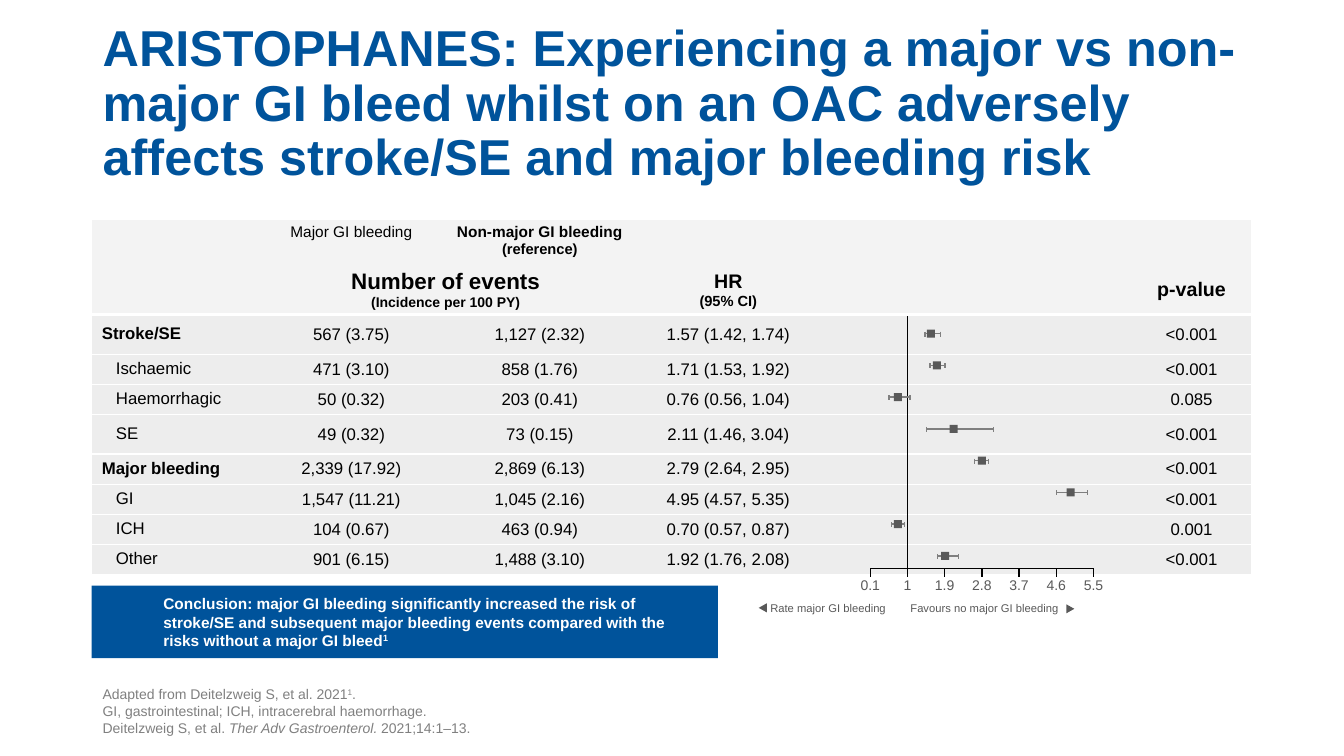
from lxml.etree import SubElement
from pptx import Presentation
from pptx.dml.color import RGBColor
from pptx.enum.shapes import MSO_CONNECTOR, MSO_SHAPE
from pptx.enum.text import MSO_ANCHOR, PP_ALIGN
from pptx.oxml.ns import qn
from pptx.util import Inches, Pt

BLUE, GREY, BLACK, WHITE = "00539B", "595959", "000000", "FFFFFF"
HEADER_FILL, BODY_FILL = "F3F3F3", "EDEDED"
NO_GRID_STYLE = "{2D5ABB26-0587-4C30-8999-92F81FD0307C}"
COLUMN_WIDTHS = [1.64, 1.87, 1.87, 1.87, 3.07, 1.18]
ROW_HEIGHTS = [0.45, 0.45, 0.39, 0.3, 0.3, 0.39, 0.3, 0.3, 0.3, 0.3]
GROUPS = ("Stroke/SE", "Major bleeding")

# Outcome, major events, non-major events, HR (95% CI), p-value
OUTCOMES = [
    ("Stroke/SE", "567 (3.75)", "1,127 (2.32)", "1.57 (1.42, 1.74)", "<0.001"),
    ("Ischaemic", "471 (3.10)", "858 (1.76)", "1.71 (1.53, 1.92)", "<0.001"),
    ("Haemorrhagic", "50 (0.32)", "203 (0.41)", "0.76 (0.56, 1.04)", "0.085"),
    ("SE", "49 (0.32)", "73 (0.15)", "2.11 (1.46, 3.04)", "<0.001"),
    ("Major bleeding", "2,339 (17.92)", "2,869 (6.13)", "2.79 (2.64, 2.95)", "<0.001"),
    ("GI", "1,547 (11.21)", "1,045 (2.16)", "4.95 (4.57, 5.35)", "<0.001"),
    ("ICH", "104 (0.67)", "463 (0.94)", "0.70 (0.57, 0.87)", "0.001"),
    ("Other", "901 (6.15)", "1,488 (3.10)", "1.92 (1.76, 2.08)", "<0.001"),
]
# Plotted estimate, lower and upper end for each outcome
INTERVALS = [(1.57, 1.43, 1.8), (1.71, 1.55, 1.91), (0.77, 0.55, 1.06), (2.12, 1.46, 3.08),
             (2.8, 2.62, 2.96), (4.95, 4.6, 5.35), (0.77, 0.61, 0.93), (1.91, 1.73, 2.24)]
TICKS = [0.1, 1, 1.9, 2.8, 3.7, 4.6, 5.5]
AXIS_Y = 5.64


def color(hex_value):
    return RGBColor.from_string(hex_value)


def hr_x(ratio):
    return 9 + (ratio - 1) * 0.41


def write(frame, paragraphs, size, ink, align=PP_ALIGN.LEFT, anchor=MSO_ANCHOR.TOP, spacing=None):
    """Each paragraph is a list of (text, run options)."""
    frame.word_wrap = True
    frame.vertical_anchor = anchor
    for i, parts in enumerate(paragraphs):
        paragraph = frame.paragraphs[0] if i == 0 else frame.add_paragraph()
        paragraph.alignment = align
        if spacing:
            paragraph.line_spacing = spacing
        for text, options in parts:
            if options.get("new_line"):
                paragraph.add_line_break()
            run = paragraph.add_run()
            run.text = text
            run.font.name = "Arial"
            run.font.size = Pt(options.get("size", size))
            run.font.bold = options.get("bold", False)
            run.font.italic = options.get("italic", False)
            run.font.color.rgb = color(ink)
            if options.get("superscript"):
                run.font._element.set("baseline", "30000")


def set_insets(frame, left=0, top=0, right=0, bottom=0):
    frame.margin_left, frame.margin_top = Inches(left), Inches(top)
    frame.margin_right, frame.margin_bottom = Inches(right), Inches(bottom)


def add_text(slide, left, top, width, height, paragraphs, size, ink, inset=True, **layout):
    frame = slide.shapes.add_textbox(
        Inches(left), Inches(top), Inches(width), Inches(height)).text_frame
    if not inset:
        set_insets(frame)
    write(frame, paragraphs, size, ink, **layout)


def add_block(slide, kind, left, top, width, height, fill, rotation=0):
    block = slide.shapes.add_shape(
        kind, Inches(left), Inches(top), Inches(width), Inches(height))
    block.shadow.inherit = False
    block.fill.solid()
    block.fill.fore_color.rgb = color(fill)
    block.line.fill.background()
    block.rotation = rotation
    return block


def add_line(slide, x1, y1, x2, y2, ink):
    line = slide.shapes.add_connector(
        MSO_CONNECTOR.STRAIGHT, Inches(x1), Inches(y1), Inches(x2), Inches(y2))
    line.line.color.rgb = color(ink)
    line.line.width = Pt(1)
    SubElement(line._element.spPr, qn("a:effectLst"))


def add_border(cell, side, points):
    edge = SubElement(cell._tc.get_or_add_tcPr(), qn(f"a:{side}"), w=str(Pt(points)))
    SubElement(SubElement(edge, qn("a:solidFill")), qn("a:srgbClr"), val=WHITE)


def style_cell(cell, row):
    if row >= 2:
        add_border(cell, "lnT", 2.25 if row == 2 else 1)
    if row >= 1:
        add_border(cell, "lnB", 2.25 if row == 1 else 1)
    cell.fill.solid()
    cell.fill.fore_color.rgb = color(BODY_FILL if row >= 2 else HEADER_FILL)
    edge = 0.03 if row == 1 else 0.04
    set_insets(cell, 0.1, edge, 0.1, edge)


def write_cell(cell, parts, size, align=PP_ALIGN.CENTER, anchor=MSO_ANCHOR.MIDDLE, spacing=None):
    write(cell.text_frame, [parts], size, BLACK, align, anchor, spacing)
    cell.vertical_anchor = anchor


def add_outcome_table(slide):
    table = slide.shapes.add_table(
        len(ROW_HEIGHTS), len(COLUMN_WIDTHS), Inches(0.91), Inches(2.18),
        Inches(sum(COLUMN_WIDTHS)), Inches(sum(ROW_HEIGHTS))).table
    table.first_row = table.horz_banding = False
    table._tbl.tblPr.find(qn("a:tableStyleId")).text = NO_GRID_STYLE
    for column, width in zip(table.columns, COLUMN_WIDTHS):
        column.width = Inches(width)
    for r, height in enumerate(ROW_HEIGHTS):
        table.rows[r].height = Inches(height)
        for cell in table.rows[r].cells:
            style_cell(cell, r)

    # Header
    bold = {"bold": True}
    second_line = {"bold": True, "new_line": True}
    table.cell(1, 1).merge(table.cell(1, 2))
    write_cell(table.cell(0, 1), [("Major GI bleeding", {})], 11, anchor=MSO_ANCHOR.TOP)
    write_cell(table.cell(0, 2), [("Non-major GI bleeding ", bold),
                                  ("(reference)", {"bold": True, "size": 10.5})],
               11, anchor=MSO_ANCHOR.TOP)
    write_cell(table.cell(1, 1), [("Number of events", bold),
                                  ("(Incidence per 100 PY)", {**second_line, "size": 10})], 16)
    write_cell(table.cell(1, 3), [("HR", bold),
                                  ("(95% CI)", {**second_line, "size": 10.5})], 14)
    write_cell(table.cell(1, 5), [("p-value", bold)], 14)

    # Outcomes
    for r, (outcome, *values) in enumerate(OUTCOMES, start=2):
        is_group = outcome in GROUPS
        label = table.cell(r, 0)
        write_cell(label, [(outcome, {"bold": is_group})], 12, PP_ALIGN.LEFT, spacing=0.9)
        if not is_group:
            label.margin_left = Inches(0.24)
        for c, value in zip((1, 2, 3, 5), values):
            write_cell(table.cell(r, c), [(value, {})], 12)

    # Keep empty cells from stretching their rows
    for cell in table.iter_cells():
        if not cell.text_frame.text:
            SubElement(cell.text_frame.paragraphs[0]._p, qn("a:endParaRPr"), sz="1000")


def add_forest_plot(slide):
    add_line(slide, hr_x(1), 3.14, hr_x(1), AXIS_Y, BLACK)
    for i, (estimate, low, high) in enumerate(INTERVALS):
        y = 3.31 + i * 0.315
        add_line(slide, hr_x(low), y, hr_x(high), y, "7F7F7F")
        for end in (low, high):
            add_line(slide, hr_x(end), y - 0.02, hr_x(end), y + 0.03, "808080")
        add_block(slide, MSO_SHAPE.RECTANGLE, hr_x(estimate) - 0.04, y - 0.04, 0.08, 0.08, GREY)

    # Axis
    add_line(slide, hr_x(TICKS[0]), AXIS_Y, hr_x(TICKS[-1]), AXIS_Y, BLACK)
    for tick in TICKS:
        x = hr_x(tick)
        add_line(slide, x, AXIS_Y, x, AXIS_Y + 0.08, BLACK)
        add_text(slide, x - 0.12, 5.72, 0.24, 0.24, [[(str(tick), {})]], 10, GREY,
                 inset=False, align=PP_ALIGN.CENTER)

    # Direction labels
    add_block(slide, MSO_SHAPE.ISOSCELES_TRIANGLE, 7.52, 5.99, 0.09, 0.08, GREY, 270)
    add_text(slide, 7.64, 5.97, 1.36, 0.2, [[("Rate major GI bleeding", {})]], 8, GREY,
             inset=False)
    add_text(slide, 8.88, 5.97, 1.62, 0.2, [[("Favours no major GI bleeding", {})]], 8, GREY,
             inset=False, align=PP_ALIGN.RIGHT)
    add_block(slide, MSO_SHAPE.ISOSCELES_TRIANGLE, 10.57, 6, 0.09, 0.08, GREY, 90)


def add_conclusion(slide):
    frame = add_block(slide, MSO_SHAPE.RECTANGLE, 0.91, 5.81, 6.21, 0.72, BLUE).text_frame
    set_insets(frame, 0.71, 0.04, 0.16, 0.04)
    write(frame, [[("Conclusion: major GI bleeding significantly increased the risk of "
                    "stroke/SE and subsequent major bleeding events compared with the "
                    "risks without a major GI bleed", {"bold": True}),
                   ("1", {"bold": True, "superscript": True})]],
          11, WHITE, anchor=MSO_ANCHOR.MIDDLE)


def main():
    deck = Presentation()
    deck.slide_width, deck.slide_height = Inches(13.33), Inches(7.5)
    slide = deck.slides.add_slide(deck.slide_layouts[6])

    # Title
    add_text(slide, 0.92, 0, 11.5, 1.9,
             [[("ARISTOPHANES: Experiencing a major vs non-major GI bleed whilst on an OAC "
                "adversely affects stroke/SE and major bleeding risk", {"bold": True})]],
             36, BLUE, anchor=MSO_ANCHOR.BOTTOM, spacing=0.9)

    add_outcome_table(slide)
    add_forest_plot(slide)
    add_conclusion(slide)

    # Sources and abbreviations
    add_text(slide, 0.92, 6.95, 11.5, 0.4, [
        [("Adapted from Deitelzweig S, et al. 2021", {}), ("1", {"superscript": True}), (".", {})],
        [("GI, gastrointestinal; ICH, intracerebral haemorrhage.", {})],
        [("Deitelzweig S, et al. ", {}), ("Ther Adv Gastroenterol.", {"italic": True}),
         (" 2021;14:1–13.", {})],
    ], 10, "808080", anchor=MSO_ANCHOR.BOTTOM)

    deck.save("out.pptx")


if __name__ == "__main__":
    main()
